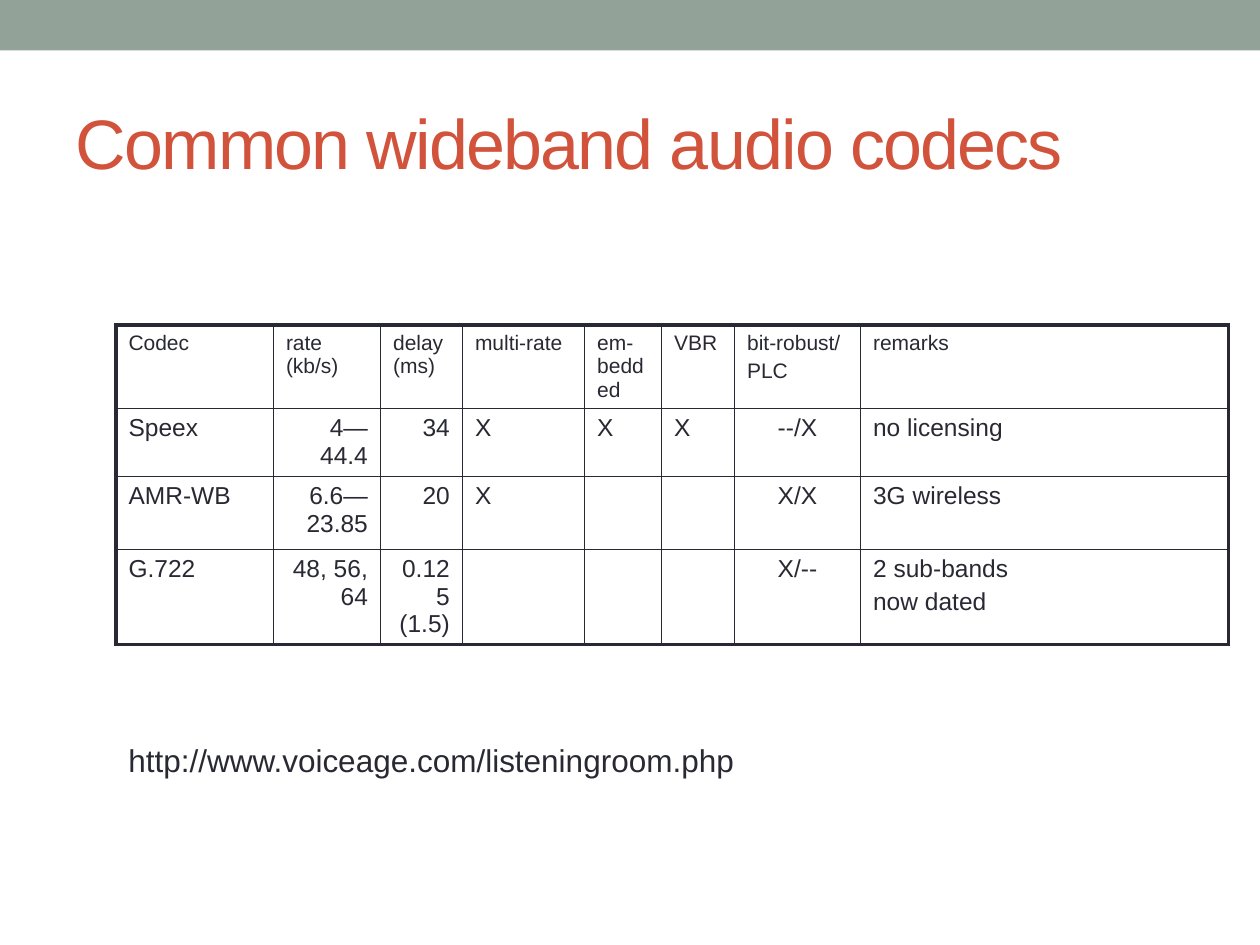
from lxml import etree
from pptx import Presentation
from pptx.dml.color import RGBColor
from pptx.enum.shapes import MSO_SHAPE
from pptx.enum.text import MSO_ANCHOR, MSO_AUTO_SIZE, PP_ALIGN
from pptx.oxml.ns import qn
from pptx.util import Inches, Pt

LEFT, CENTER, RIGHT = PP_ALIGN.LEFT, PP_ALIGN.CENTER, PP_ALIGN.RIGHT
RECTANGLE = MSO_SHAPE.RECTANGLE
MIDDLE = MSO_ANCHOR.MIDDLE
NO_AUTOFIT = MSO_AUTO_SIZE.NONE
TITLE_ONLY = 5

INK, RED, SAGE = "292934", "D2533C", "93A299"
THIN, THICK = 1, 2.25

COLUMN_WIDTHS = [1.25, 0.85, 0.65, 0.97, 0.61, 0.58, 1, 2.92]
ROW_HEIGHTS = [0.66, 0.54, 0.58, 0.75]
BODY_ALIGNMENTS = [LEFT, RIGHT, RIGHT, LEFT, LEFT, LEFT, CENTER, LEFT]
CODEC_ROWS = [
    ["Codec", "rate (kb/s)", "delay (ms)", "multi-rate", "em-bedded", "VBR",
     "bit-robust/\nPLC", "remarks"],
    ["Speex", "4—44.4", "34", "X", "X", "X", "--/X", "no licensing"],
    ["AMR-WB", "6.6—23.85", "20", "X", "", "", "X/X", "3G wireless"],
    ["G.722", "48, 56, 64", "0.125 (1.5)", "", "", "", "X/--",
     "2 sub-bands\nnow dated"],
]


def color(hex_text):
    return RGBColor.from_string(hex_text)


def write_text(frame, text, size, hex_text, alignment=LEFT):
    frame.text = text
    for index, para in enumerate(frame.paragraphs):
        para.alignment = alignment
        para.space_before = Pt(size * 0.2 if index else 0)
        para.font.name = "Arial"
        para.font.size = Pt(size)
        para.font.color.rgb = color(hex_text)


def set_borders(cell, widths):
    properties = cell._tc.get_or_add_tcPr()
    for index, (side, width) in enumerate(widths.items()):
        line = etree.Element(qn(f"a:ln{side}"), w=str(Pt(width)))
        fill = etree.SubElement(line, qn("a:solidFill"))
        etree.SubElement(fill, qn("a:srgbClr"), val=INK)
        properties.insert(index, line)


def add_banner(page, left, top, width, height):
    banner = page.shapes.add_shape(
        RECTANGLE, Inches(left), Inches(top), Inches(width), Inches(height))
    banner.shadow.inherit = False
    banner.fill.solid()
    banner.fill.fore_color.rgb = color(SAGE)
    banner.line.fill.background()


def place_title(page, left, top, width, height):
    title = page.shapes.title
    title.left, title.top = Inches(left), Inches(top)
    title.width, title.height = Inches(width), Inches(height)
    frame = title.text_frame
    frame.auto_size = NO_AUTOFIT
    frame.vertical_anchor = MIDDLE
    write_text(frame, "Common wideband audio codecs", 40, RED)
    frame.paragraphs[0].runs[0]._r.get_or_add_rPr().set("spc", "-100")


def add_codec_table(page, left, top):
    last_row, last_column = len(ROW_HEIGHTS) - 1, len(COLUMN_WIDTHS) - 1
    table = page.shapes.add_table(
        len(ROW_HEIGHTS), len(COLUMN_WIDTHS), Inches(left), Inches(top),
        Inches(sum(COLUMN_WIDTHS)), Inches(sum(ROW_HEIGHTS))).table
    table.first_row = table.horz_banding = False
    for column, width in zip(table.columns, COLUMN_WIDTHS):
        column.width = Inches(width)
    for row, height in zip(table.rows, ROW_HEIGHTS):
        row.height = Inches(height)
    for r, texts in enumerate(CODEC_ROWS):
        for c, text in enumerate(texts):
            cell = table.cell(r, c)
            cell.fill.background()
            write_text(cell.text_frame, text, 14 if r else 12, INK,
                       BODY_ALIGNMENTS[c] if r else LEFT)
            set_borders(cell, {
                "L": THIN if c else THICK,
                "R": THICK if c == last_column else THIN,
                "T": THIN if r else THICK,
                "B": THICK if r == last_row else THIN,
            })


def add_link_text(page, left, top, width, height):
    box = page.shapes.add_textbox(
        Inches(left), Inches(top), Inches(width), Inches(height))
    box.text_frame.word_wrap = True
    write_text(box.text_frame, "http://www.voiceage.com/listeningroom.php", 18, INK)


def main():
    deck = Presentation()
    deck.slide_width, deck.slide_height = Inches(10), Inches(7.5)
    page = deck.slides.add_slide(deck.slide_layouts[TITLE_ONLY])
    add_banner(page, 0, 0, 10, 0.4)
    place_title(page, 0.5, 0.58, 9, 1.08)
    add_codec_table(page, 0.92, 2.58)
    add_link_text(page, 0.92, 5.83, 6.42, 0.4)
    deck.save("out.pptx")


if __name__ == "__main__":
    main()
